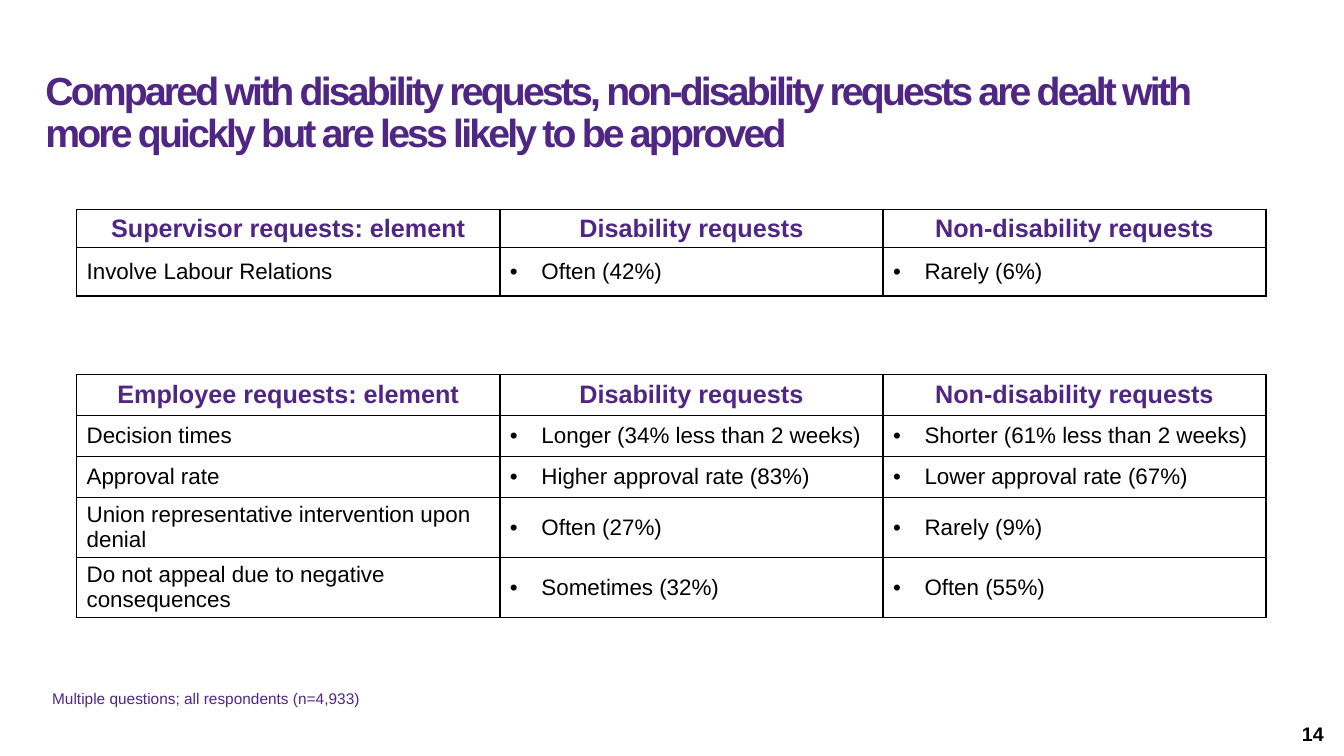
from lxml import etree
from pptx import Presentation
from pptx.dml.color import RGBColor
from pptx.enum import text as t
from pptx.oxml.ns import qn
from pptx.util import Pt

PURPLE = RGBColor(0x4F, 0x26, 0x84)
BLACK = RGBColor(0, 0, 0)
FONT = "Arial"
COLS = (302.4, 273.6, 273.6)
LEFT = 54.7
HEADS = ("Disability requests", "Non-disability requests")
SUPER = [
    ("Supervisor requests: element", *HEADS),
    ("Involve Labour Relations", "Often (42%)", "Rarely (6%)"),
]
STAFF = [
    ("Employee requests: element", *HEADS),
    ("Decision times", "Longer (34% less than 2 weeks)",
     "Shorter (61% less than 2 weeks)"),
    ("Approval rate", "Higher approval rate (83%)", "Lower approval rate (67%)"),
    ("Union representative intervention upon denial", "Often (27%)", "Rarely (9%)"),
    ("Do not appeal due to negative consequences", "Sometimes (32%)", "Often (55%)"),
]


def style(para, size, color, bold=False):
    for run in para.runs:
        font = run.font
        font.name, font.size, font.bold = FONT, Pt(size), bold
        font.color.rgb = color


def indent(para, size):
    """Set a hanging indent of the given points."""
    props = para._p.get_or_add_pPr()
    props.set("marL", str(Pt(size)))
    props.set("indent", str(-Pt(size)))
    return props


def bullet(para):
    props = indent(para, 22.5)
    etree.SubElement(props, qn("a:buFont"), typeface=FONT)
    etree.SubElement(props, qn("a:buChar"), char="•")


def border(cell):
    """Draw a thin black line on all four sides, ahead of the cell's fill."""
    props = cell._tc.get_or_add_tcPr()
    for spot, side in enumerate(("lnL", "lnR", "lnT", "lnB")):
        line = etree.Element(qn(f"a:{side}"), w=str(Pt(1)))
        fill = etree.SubElement(line, qn("a:solidFill"))
        etree.SubElement(fill, qn("a:srgbClr"), val=str(BLACK))
        props.insert(spot, line)


def add_title(slide, left, top, width, height):
    title = slide.shapes.title
    title.left, title.top, title.width, title.height = map(
        Pt, (left, top, width, height))
    frame = title.text_frame
    frame.text = ("Compared with disability requests, non-disability requests "
                  "are dealt with more quickly but are less likely to be approved")
    frame.margin_left = frame.margin_right = 0
    frame.margin_top = frame.margin_bottom = Pt(1.5)
    frame.vertical_anchor = t.MSO_ANCHOR.TOP
    frame.auto_size = t.MSO_AUTO_SIZE.NONE
    frame.word_wrap = True
    para = frame.paragraphs[0]
    para.alignment = t.PP_ALIGN.LEFT
    para.line_spacing = 0.9
    style(para, 28, PURPLE, True)
    para.runs[0]._r.get_or_add_rPr().set("spc", "-200")


def add_grid(slide, left, top, rows, highs):
    """Place a table whose first row is the heading; highs are row heights."""
    grid = slide.shapes.add_table(
        len(rows), len(COLS), Pt(left), Pt(top), Pt(sum(COLS)), Pt(sum(highs))).table
    grid.first_row = grid.horz_banding = False
    for col, width in zip(grid.columns, COLS):
        col.width = Pt(width)
    for r, (row, high) in enumerate(zip(rows, highs)):
        grid.rows[r].height = Pt(high)
        for c, words in enumerate(row):
            cell = grid.cell(r, c)
            cell.text = words
            cell.vertical_anchor = t.MSO_ANCHOR.MIDDLE
            cell.fill.background()
            border(cell)
            para = cell.text_frame.paragraphs[0]
            if r == 0:
                para.alignment = t.PP_ALIGN.CENTER
                style(para, 18, PURPLE, True)
            else:
                if c:
                    bullet(para)
                style(para, 16, BLACK)


def add_label(slide, left, top, width, height, words):
    box = slide.shapes.add_textbox(*map(Pt, (left, top, width, height)))
    frame = box.text_frame
    frame.word_wrap = True
    frame.text = words
    return frame


def add_note(slide, left, top, width, height):
    frame = add_label(slide, left, top, width, height,
                      "Multiple questions; all respondents (n=4,933)")
    para = frame.paragraphs[0]
    indent(para, 41)
    style(para, 11, PURPLE)


def add_number(slide, left, top, width, height):
    frame = add_label(slide, left, top, width, height, "14")
    frame.vertical_anchor = t.MSO_ANCHOR.MIDDLE
    para = frame.paragraphs[0]
    para.alignment = t.PP_ALIGN.RIGHT
    style(para, 14, BLACK, True)


def main():
    deck = Presentation()
    deck.slide_width, deck.slide_height = Pt(960), Pt(540)
    slide = deck.slides.add_slide(deck.slide_layouts[5])
    add_title(slide, 32.4, 49.7, 820, 64)
    add_grid(slide, LEFT, 149.5, SUPER, (27, 34.5))
    add_grid(slide, LEFT, 267.5, STAFF, (29.3,) * 3 + (42.9,) * 2)
    add_number(slide, 736.6, 509.8, 216, 28.8)
    add_note(slide, 30.2, 488.9, 859.7, 20.9)
    deck.save("out.pptx")


if __name__ == "__main__":
    main()
